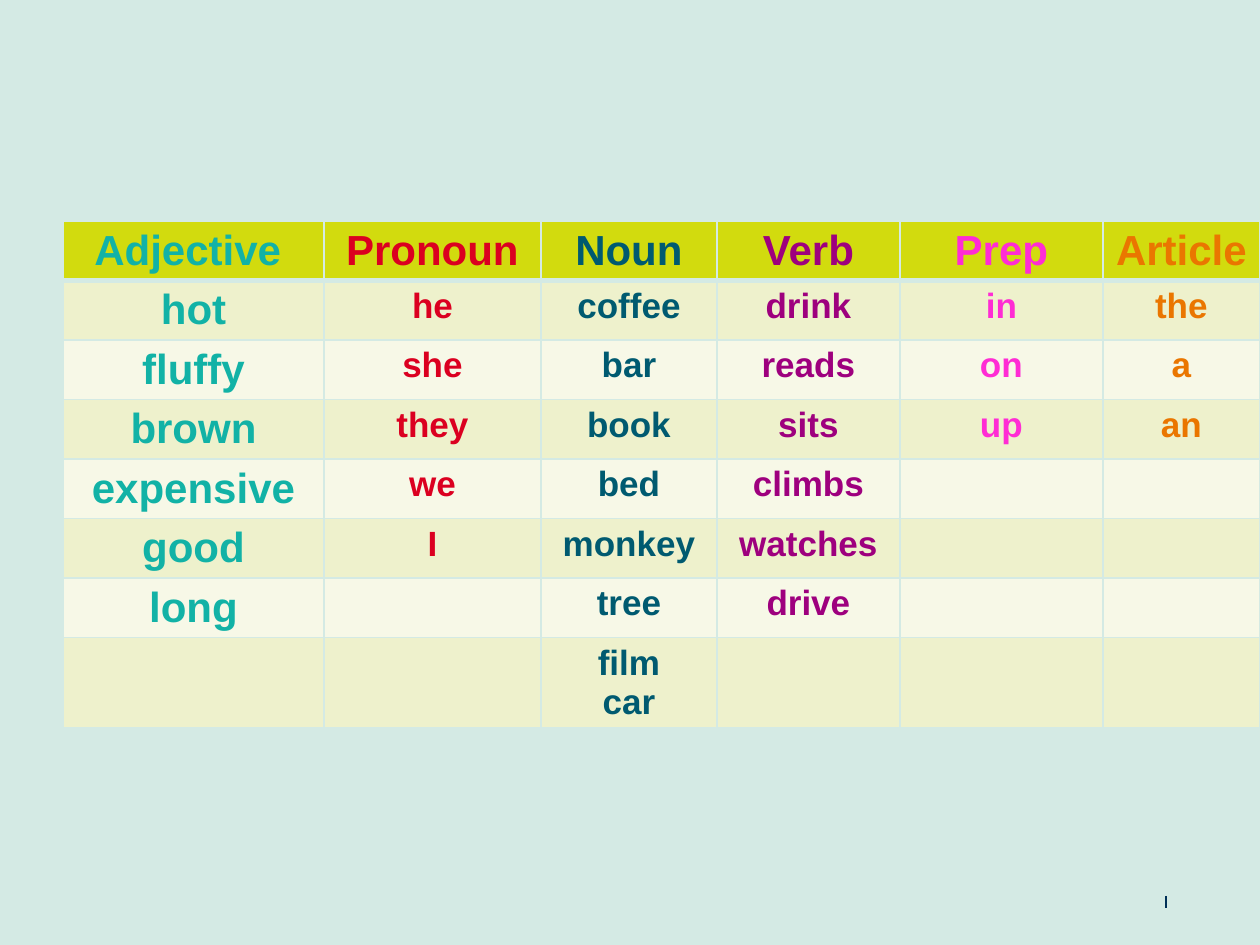
from lxml.etree import SubElement
from pptx import Presentation
from pptx.dml.color import RGBColor
from pptx.enum.shapes import MSO_CONNECTOR as Link
from pptx.enum.text import PP_ALIGN as Align
from pptx.oxml.ns import qn
from pptx.util import Pt

PX = 914400 / 126
BACK = "D4EAE4"


def px(n):
    return round(n * PX)


def hue(code):
    return RGBColor.from_string(code)


deck = Presentation()
deck.slide_width, deck.slide_height = px(1260), px(945)
slide = deck.slides.add_slide(deck.slide_layouts[6])
slide.background.fill.solid()
slide.background.fill.fore_color.rgb = hue(BACK)

# Footer tick
tick = slide.shapes.add_connector(Link.STRAIGHT, px(1166), px(896), px(1166), px(908))
tick.line.color.rgb = hue("003057")
tick.line.width = Pt(0.75)
SubElement(tick._element.spPr, qn("a:effectLst"))

# Word classes: width, colour, heading, words
classes = [
    (261, "12B2A6", "Adjective ", ["hot", "fluffy", "brown", "expensive", "good", "long"]),
    (217, "DB0020", "Pronoun", ["he", "she", "they", "we", "I"]),
    (176, "005A70", "Noun", ["coffee", "bar", "book", "bed", "monkey", "tree", "film\ncar"]),
    (183, "9E007E", "Verb", ["drink", "reads", "sits", "climbs", "watches", "drive"]),
    (203, "FF2CD4", "Prep", ["in", "on", "up"]),
    (157, "EA7600", "Article", ["the", "a", "an"]),
]
ROWS, HIGH = 8, 52
wide = sum(c[0] for c in classes)
table = slide.shapes.add_table(
    ROWS, len(classes), px(63), px(221), px(wide), px(ROWS * HIGH)).table
for row in table.rows:
    row.height = px(HIGH)

for x, (width, ink, head, words) in enumerate(classes):
    table.columns[x].width = px(width)
    texts = [head] + words
    for y in range(ROWS):
        cell = table.cell(y, x)
        props = cell._tc.get_or_add_tcPr()
        for side in "LRTB":
            thick = (y, side) in [(0, "B"), (1, "T")]
            edge = SubElement(props, qn("a:ln" + side), w=str(Pt(3 if thick else 1)))
            fill = SubElement(edge, qn("a:solidFill"))
            SubElement(fill, qn("a:srgbClr"), val=BACK)
        cell.fill.solid()
        shade = "D2DB0E" if y == 0 else "EEF1CC" if y % 2 else "F7F8E7"
        cell.fill.fore_color.rgb = hue(shade)
        if y >= len(texts):
            continue
        cell.text = texts[y]
        style = {"name": "Arial", "bold": True, "size": Pt(24 if 0 in (x, y) else 20)}
        for para in cell.text_frame.paragraphs:
            para.alignment = Align.CENTER
            for run in para.runs:
                for key, value in style.items():
                    setattr(run.font, key, value)
                run.font.color.rgb = hue(ink)

deck.save("out.pptx")
